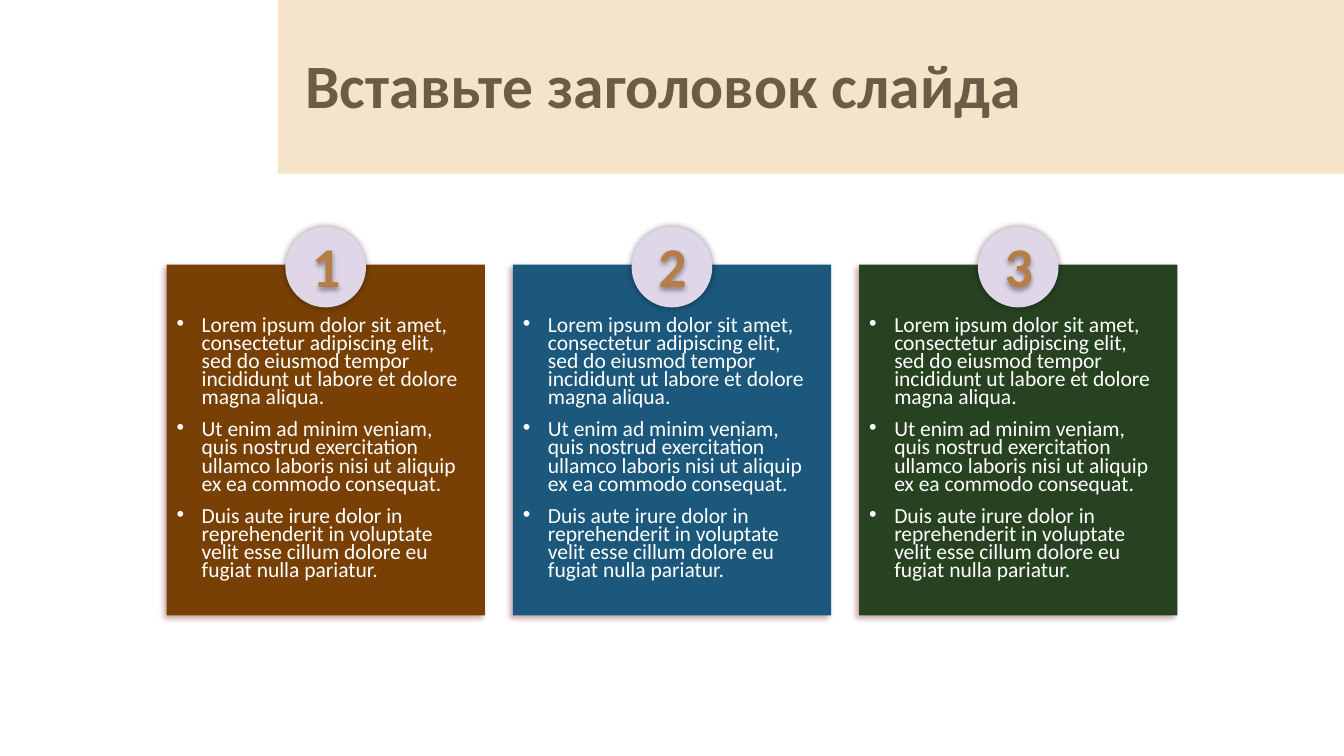
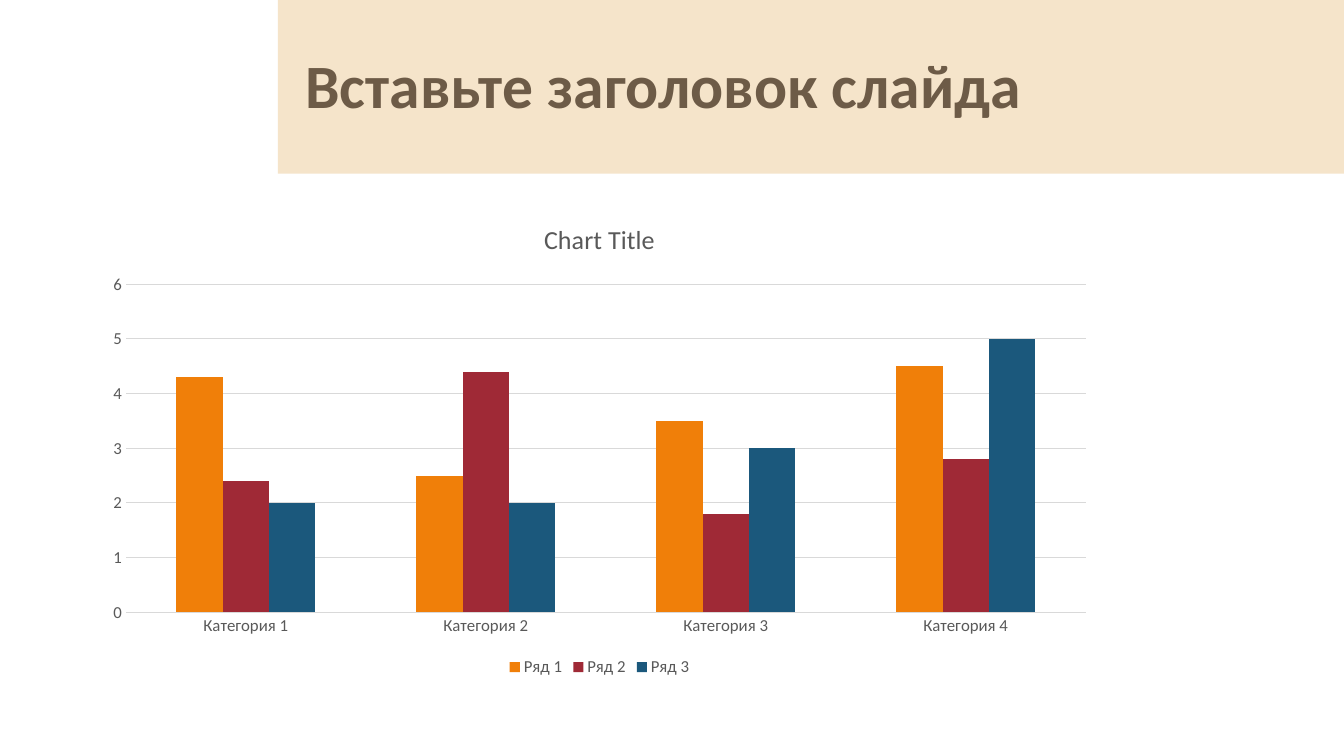
from dataclasses import dataclass

from lxml import etree
from pptx import Presentation
from pptx.chart.data import CategoryChartData
from pptx.dml.color import RGBColor as RGB
from pptx.enum.chart import XL_CHART_TYPE as CHART
from pptx.enum.chart import XL_LEGEND_POSITION as LEGEND
from pptx.enum.chart import XL_TICK_MARK as TICK
from pptx.enum.shapes import MSO_SHAPE as SHAPE
from pptx.enum.text import MSO_ANCHOR as ANCHOR
from pptx.enum.text import MSO_AUTO_SIZE as AUTO
from pptx.enum.text import PP_ALIGN as ALIGN
from pptx.oxml.ns import qn
from pptx.util import Pt


@dataclass(frozen=True)
class Theme:
    font: str = "Calibri"
    # Colours
    band: str = "F5E4CA"
    title: str = "6D5B47"
    cards: tuple = ("784004", "1B587C", "274221")
    card_text: str = "FFFFFF"
    card_shadow: str = "771F28"
    badge: str = "DFD7E7"
    badge_text: str = "B67D47"
    badge_shadow: str = "000000"
    series: tuple = ("F07F09", "9F2936", "1B587C")
    chart_text: str = "595959"
    grid: str = "D9D9D9"
    # Type sizes
    title_size: float = 44
    badge_size: float = 40
    body_size: float = 15.4
    chart_title_size: float = 18.6
    label_size: float = 12


T = Theme()
TITLE = "Вставьте заголовок слайда"
BAND_BOX = (198.5, 0, 761.5, 124)
CARDS_BOX = (119, 189, 722, 250.5)
CHART_BOX = (66.5, 144, 723.5, 342.5)
BULLETS = (
    "Lorem ipsum dolor sit amet, consectetur adipiscing elit, sed do eiusmod "
    "tempor incididunt ut labore et dolore magna aliqua.",
    "Ut enim ad minim veniam, quis nostrud exercitation ullamco laboris nisi "
    "ut aliquip ex ea commodo consequat.",
    "Duis aute irure dolor in reprehenderit in voluptate velit esse cillum "
    "dolore eu fugiat nulla pariatur.",
)
CATEGORIES = [f"Категория {n}" for n in range(1, 5)]
SERIES = {
    "Ряд 1": (4.3, 2.5, 3.5, 4.5),
    "Ряд 2": (2.4, 4.4, 1.8, 2.8),
    "Ряд 3": (2, 2, 3, 5),
}


def pts(*lengths):
    return [Pt(v) for v in lengths]


def style_font(font, size, color, bold=False):
    font.name, font.size, font.bold = T.font, Pt(size), bold
    font.color.rgb = RGB.from_string(color)


def add_block(slide, kind, box, color):
    sp = slide.shapes.add_shape(kind, *pts(*box))
    sp.fill.solid()
    sp.fill.fore_color.rgb = RGB.from_string(color)
    sp.line.fill.background()
    sp.shadow.inherit = False
    return sp


def add_text(slide, box):
    sp = slide.shapes.add_textbox(*pts(*box))
    sp.text_frame.word_wrap = True
    return sp


def cast_shadow(sp, color, blur, dist, angle):
    sp.shadow.inherit = False
    effects = sp.element.spPr.find(qn("a:effectLst"))
    outer = etree.SubElement(
        effects, qn("a:outerShdw"), blurRad=str(Pt(blur)), dist=str(Pt(dist)),
        dir=str(angle * 60000), algn="ctr", rotWithShape="0")
    clr = etree.SubElement(outer, qn("a:srgbClr"), val=color)
    etree.SubElement(clr, qn("a:alpha"), val="40000")


def add_bullet(p):
    pPr = p._p.get_or_add_pPr()
    pPr.set("marL", str(Pt(18)))
    pPr.set("indent", str(Pt(-18)))
    etree.SubElement(pPr, qn("a:buFont"), typeface="Arial")
    etree.SubElement(pPr, qn("a:buChar"), char="•")


def prepare_layout(layout, slide):
    """Put the title band on the layout, behind its title."""
    for ph in list(layout.placeholders):
        if ph.placeholder_format.idx:
            ph.element.getparent().remove(ph.element)
    band = add_block(slide, SHAPE.RECTANGLE, BAND_BOX, T.band)
    layout.shapes.element.insert(2, band.element)


def place_title(slide, box):
    x, y, w, h = box
    sp = slide.shapes.title
    sp.left, sp.top, sp.width, sp.height = pts(x + 12.5, y + 11, 705.5, h - 20)
    tf = sp.text_frame
    tf.text = TITLE
    tf.word_wrap, tf.auto_size = True, AUTO.NONE
    tf.vertical_anchor = ANCHOR.MIDDLE
    p = tf.paragraphs[0]
    p.alignment, p.line_spacing = ALIGN.LEFT, 0.9
    style_font(p.runs[0].font, T.title_size, T.title, True)


def draw_card(slide, box, number, color):
    x, y, w, h = box
    card = add_block(slide, SHAPE.RECTANGLE, box, color)
    cast_shadow(card, T.card_shadow, 4, 3, 135)

    # Bulleted text
    tf = add_text(slide, (x, y + 34.5, w - 6.5, h - 40.5)).text_frame
    for i, text in enumerate(BULLETS):
        p = tf.add_paragraph() if i else tf.paragraphs[0]
        p.text = text
        add_bullet(p)
        p.line_spacing = 0.7
        p.space_before = Pt(10 if i else 0)
        style_font(p.runs[0].font, T.body_size, T.card_text)

    # Numbered badge across the top edge
    d = 57.6
    left, top = x + (w - d) / 2, y - 27
    badge = add_block(slide, SHAPE.OVAL, (left, top, d, d), T.badge)
    cast_shadow(badge, T.badge_shadow, 5, 0, 0)
    sp = add_text(slide, (left + 0.5, top, d, 55.5))
    cast_shadow(sp, T.badge_shadow, 4, 2, 90)
    sp.text_frame.auto_size = AUTO.SHAPE_TO_FIT_TEXT
    p = sp.text_frame.paragraphs[0]
    p.text, p.alignment = str(number), ALIGN.CENTER
    style_font(p.runs[0].font, T.badge_size, T.badge_text, True)


def draw_cards(slide, box, gap=20):
    x, y, w, h = box
    count = len(T.cards)
    card_w = (w - gap * (count - 1)) / count
    for i, color in enumerate(T.cards):
        draw_card(slide, (x + i * (card_w + gap), y, card_w, h), i + 1, color)


def draw_chart(slide, box):
    data = CategoryChartData()
    data.categories = CATEGORIES
    for name, values in SERIES.items():
        data.add_series(name, values)
    chart = slide.shapes.add_chart(
        CHART.COLUMN_CLUSTERED, *pts(*box), data).chart
    style_font(chart.font, T.label_size, T.chart_text)

    # Title and legend
    chart.has_title = True
    tf = chart.chart_title.text_frame
    tf.text = "Chart Title"
    style_font(tf.paragraphs[0].runs[0].font, T.chart_title_size, T.chart_text)
    chart.chart_title.include_in_layout = False
    chart.has_legend = True
    chart.legend.position = LEGEND.BOTTOM
    chart.legend.include_in_layout = False
    style_font(chart.legend.font, T.label_size, T.chart_text)

    # Columns
    plot = chart.plots[0]
    plot.gap_width, plot.overlap, plot.vary_by_categories = 219, 0, False
    for ser, color in zip(plot.series, T.series):
        ser.format.fill.solid()
        ser.format.fill.fore_color.rgb = RGB.from_string(color)

    # Axes
    cat, val = chart.category_axis, chart.value_axis
    for axis in (cat, val):
        axis.major_tick_mark = axis.minor_tick_mark = TICK.NONE
        style_font(axis.tick_labels.font, T.label_size, T.chart_text)
    val.minimum_scale, val.maximum_scale, val.major_unit = 0, 6, 1
    val.format.line.fill.background()
    for line in (cat.format.line, val.major_gridlines.format.line):
        line.color.rgb = RGB.from_string(T.grid)
        line.width = Pt(0.75)


def main():
    prs = Presentation()
    prs.slide_width, prs.slide_height = pts(960, 540)
    layout = prs.slide_layouts[5]
    parts = ((draw_cards, CARDS_BOX), (draw_chart, CHART_BOX))
    for i, (draw, box) in enumerate(parts):
        slide = prs.slides.add_slide(layout)
        if i == 0:
            prepare_layout(layout, slide)
        place_title(slide, BAND_BOX)
        draw(slide, box)
    prs.save("out.pptx")


if __name__ == "__main__":
    main()
